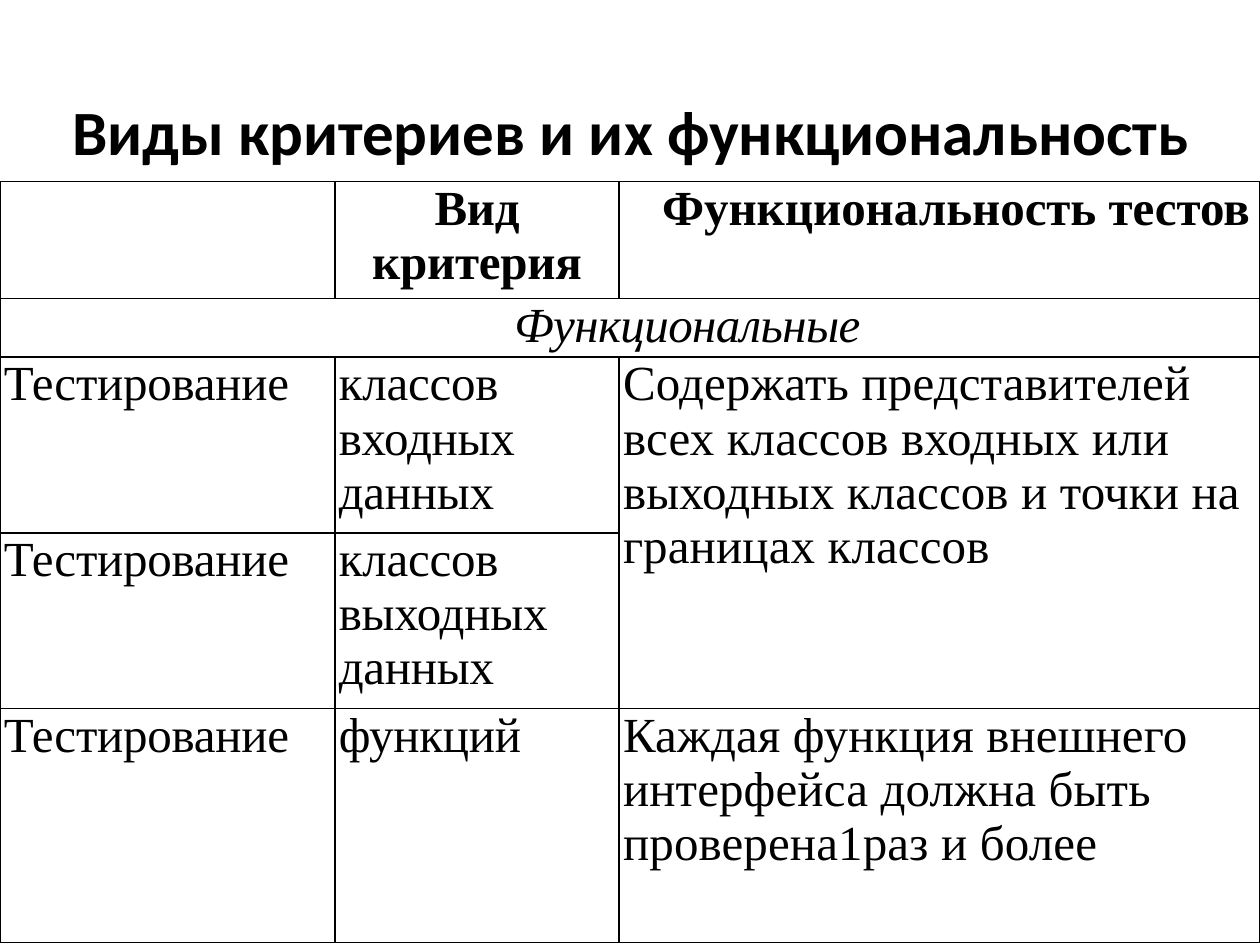
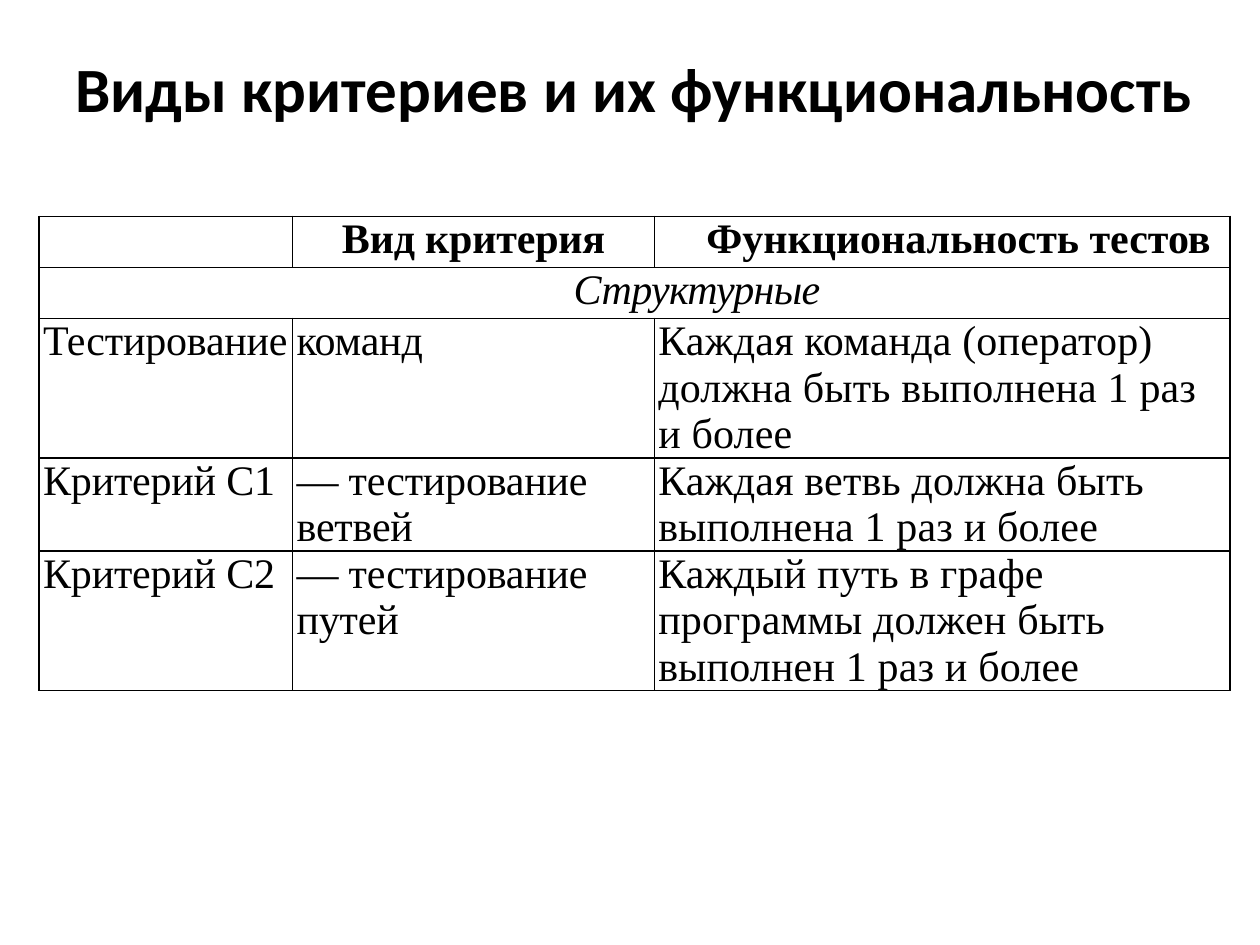
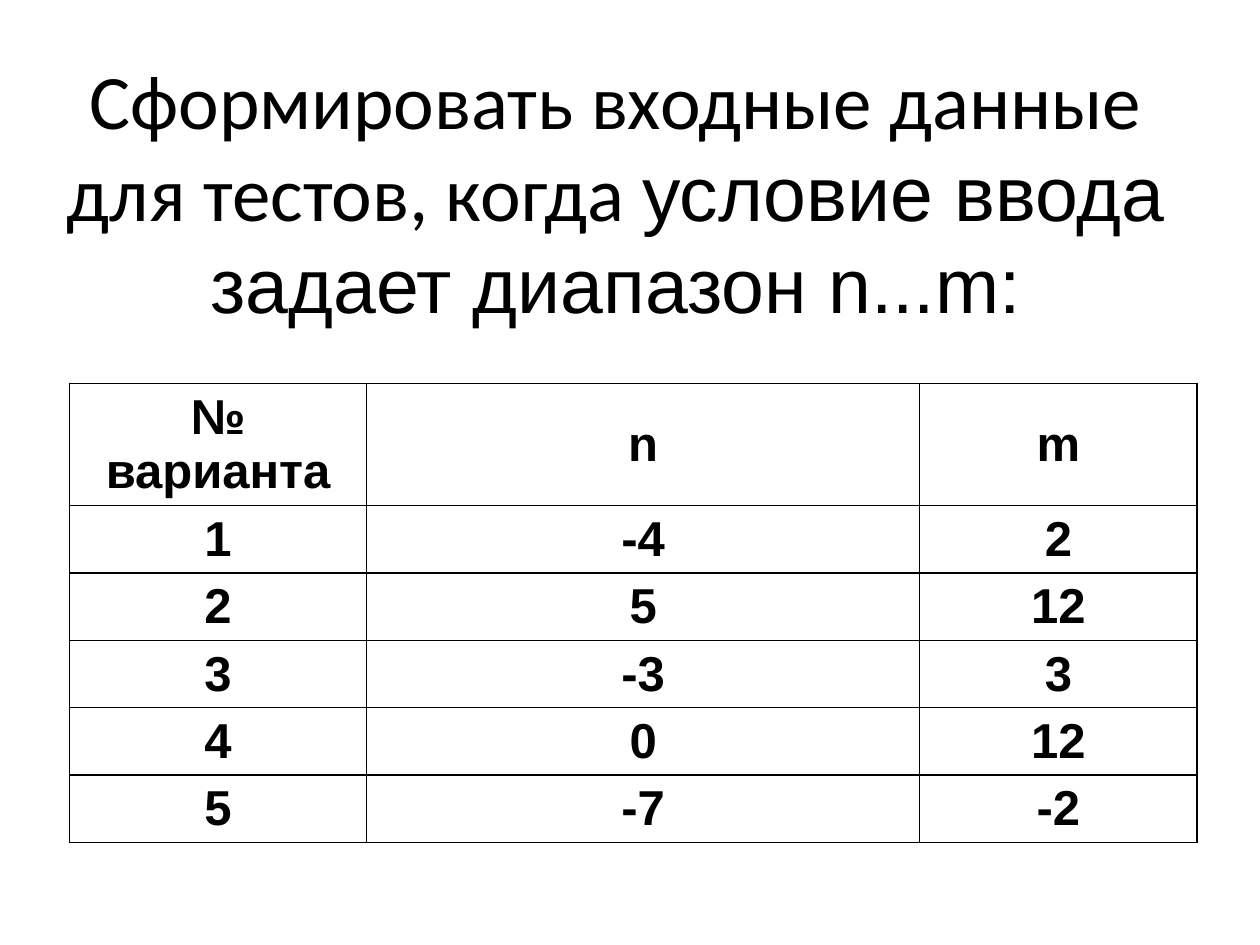
from lxml import etree
from pptx import Presentation
from pptx.dml.color import RGBColor
from pptx.enum.text import MSO_ANCHOR as ANCHOR, PP_ALIGN as ALIGN
from pptx.oxml.ns import qn
from pptx.util import Cm, Pt

BLACK = RGBColor(0x00, 0x00, 0x00)
TITLE_FONT = "Calibri"
CRITERIA_FONT = "Times New Roman"
VARIANT_FONT = "Arial"
CRITERIA_TITLE = "Виды критериев и их функциональность"
CRITERIA_HEADER = ("", "Вид критерия", "Функциональность тестов")
HEADER_SPACING = (0, -0.1, 0)
BODY_SPACING = (-0.1, -0.1, 0.1)


def add_slide(prs, left, top, width, height, size, bold, *parts):
    """Add a titled slide; parts are (text, font name) pairs of the title."""
    slide = prs.slides.add_slide(prs.slide_layouts[5])
    title = slide.shapes.title
    title.left, title.top = Cm(left), Cm(top)
    title.width, title.height = Cm(width), Cm(height)
    tf = title.text_frame
    tf.vertical_anchor = ANCHOR.MIDDLE
    p = tf.paragraphs[0]
    p.alignment = ALIGN.CENTER
    p.font.size, p.font.bold = Pt(size), bold
    p.font.color.rgb = BLACK
    for text, font in parts:
        r = p.add_run()
        r.text, r.font.name = text, font
    return slide


def set_borders(cell):
    tc_pr = cell._tc.get_or_add_tcPr()
    for side in ("a:lnL", "a:lnR", "a:lnT", "a:lnB"):
        ln = etree.SubElement(tc_pr, qn(side), w=str(Pt(1)))
        fill = etree.SubElement(ln, qn("a:solidFill"))
        etree.SubElement(fill, qn("a:srgbClr"), val=str(BLACK))


def add_grid(slide, left, top, cols, rows):
    """Add a plain table with black cell borders; lengths are in cm."""
    table = slide.shapes.add_table(
        len(rows), len(cols), Cm(left), Cm(top), Cm(sum(cols)), Cm(sum(rows))
    ).table
    table.first_row = table.horz_banding = False
    for column, width in zip(table.columns, cols):
        column.width = Cm(width)
    for row, height in zip(table.rows, rows):
        row.height = Cm(height)
    for cell in table.iter_cells():
        set_borders(cell)
        cell.fill.background()
    return table


def write_cell(cell, text, font, size, align=ALIGN.LEFT, bold=False,
               italic=False, indent=0, spacing=0):
    p = cell.text_frame.paragraphs[0]
    p.alignment = align
    if indent:
        p._p.get_or_add_pPr().set("marL", str(Cm(indent)))
    r = p.add_run()
    r.text = text
    if spacing:
        r._r.get_or_add_rPr().set("spc", str(round(spacing * 100)))
    p.font.name, p.font.size = font, Pt(size)
    p.font.bold, p.font.italic = bold, italic
    p.font.color.rgb = BLACK


def add_criteria_table(slide, left, top, cols, rows, size, group,
                       group_indent, group_spacing, body):
    """Add a table with a header, a merged group row and the criteria."""
    table = add_grid(slide, left, top, cols, rows)
    for cell in table.iter_cells():
        cell.margin_left = cell.margin_right = Cm(0.08)
        cell.margin_top = cell.margin_bottom = 0
    for c, (text, spacing) in enumerate(zip(CRITERIA_HEADER, HEADER_SPACING)):
        if text:
            write_cell(table.cell(0, c), text, CRITERIA_FONT, size, ALIGN.CENTER,
                       bold=True, indent=0.66 if c == 2 else 0, spacing=spacing)
    group_cell = table.cell(1, 0)
    group_cell.merge(table.cell(1, 2))
    write_cell(group_cell, group, CRITERIA_FONT, size, ALIGN.CENTER, italic=True,
               indent=group_indent, spacing=group_spacing)
    for r, texts in enumerate(body, 2):
        for c, text in enumerate(texts):
            if text is None:
                table.cell(r - 1, c).merge(table.cell(r, c))
            else:
                write_cell(table.cell(r, c), text, CRITERIA_FONT, size,
                           spacing=BODY_SPACING[c])


def add_variant_table(slide, left, top, cols, rows, values):
    table = add_grid(slide, left, top, cols, rows)
    for r, texts in enumerate(values):
        for c, text in enumerate(texts):
            cell = table.cell(r, c)
            cell.vertical_anchor = ANCHOR.MIDDLE
            write_cell(cell, str(text), VARIANT_FONT, 28, ALIGN.CENTER, bold=True)


def main():
    prs = Presentation()
    prs.slide_width, prs.slide_height = Cm(25.4), Cm(19.05)

    slide = add_slide(prs, 0.51, 1.52, 24.41, 2.21, 36, True,
                      (CRITERIA_TITLE, TITLE_FONT))
    add_criteria_table(
        slide, 0, 3.66, (6.75, 5.73, 12.92), (2.36, 1.18, 3.54, 3.54, 4.72), 28,
        "Функциональные", 2.31, -0.3,
        [("Тестирование", "классов входных данных",
          "Содержать представителей всех классов входных или выходных классов "
          "и точки на границах классов"),
         ("Тестирование", "классов выходных данных", None),
         ("Тестирование", "функций",
          "Каждая функция внешнего интерфейса должна быть проверена1раз и более")])

    slide = add_slide(prs, 0.58, 0.76, 24.41, 2.01, 36, True,
                      (CRITERIA_TITLE, TITLE_FONT))
    add_criteria_table(
        slide, 0.79, 4.36, (5.11, 7.29, 11.61), (1.03, 1.03, 2.8, 1.88, 2.8), 24,
        "Структурные", 2.51, -0.4,
        [("Тестирование", "команд",
          "Каждая команда (оператор) должна быть выполнена 1 раз и более"),
         ("Критерий С1", "— тестирование ветвей",
          "Каждая ветвь должна быть выполнена 1 раз и более"),
         ("Критерий С2", "— тестирование путей",
          "Каждый путь в графе программы должен быть выполнен 1 раз и более")])

    slide = add_slide(prs, 0.71, 0.76, 23.42, 6.17, 44, False,
                      ("Сформировать входные данные для тестов, когда ", TITLE_FONT),
                      ("условие ввода задает диапазон n...m:", VARIANT_FONT))
    add_variant_table(
        slide, 1.4, 7.73, (5.99, 11.15, 5.59), (2.44,) + (1.36,) * 5,
        [("№ варианта", "n", "m"),
         (1, -4, 2), (2, 5, 12), (3, -3, 3), (4, 0, 12), (5, -7, -2)])

    prs.save("out.pptx")


if __name__ == "__main__":
    main()
